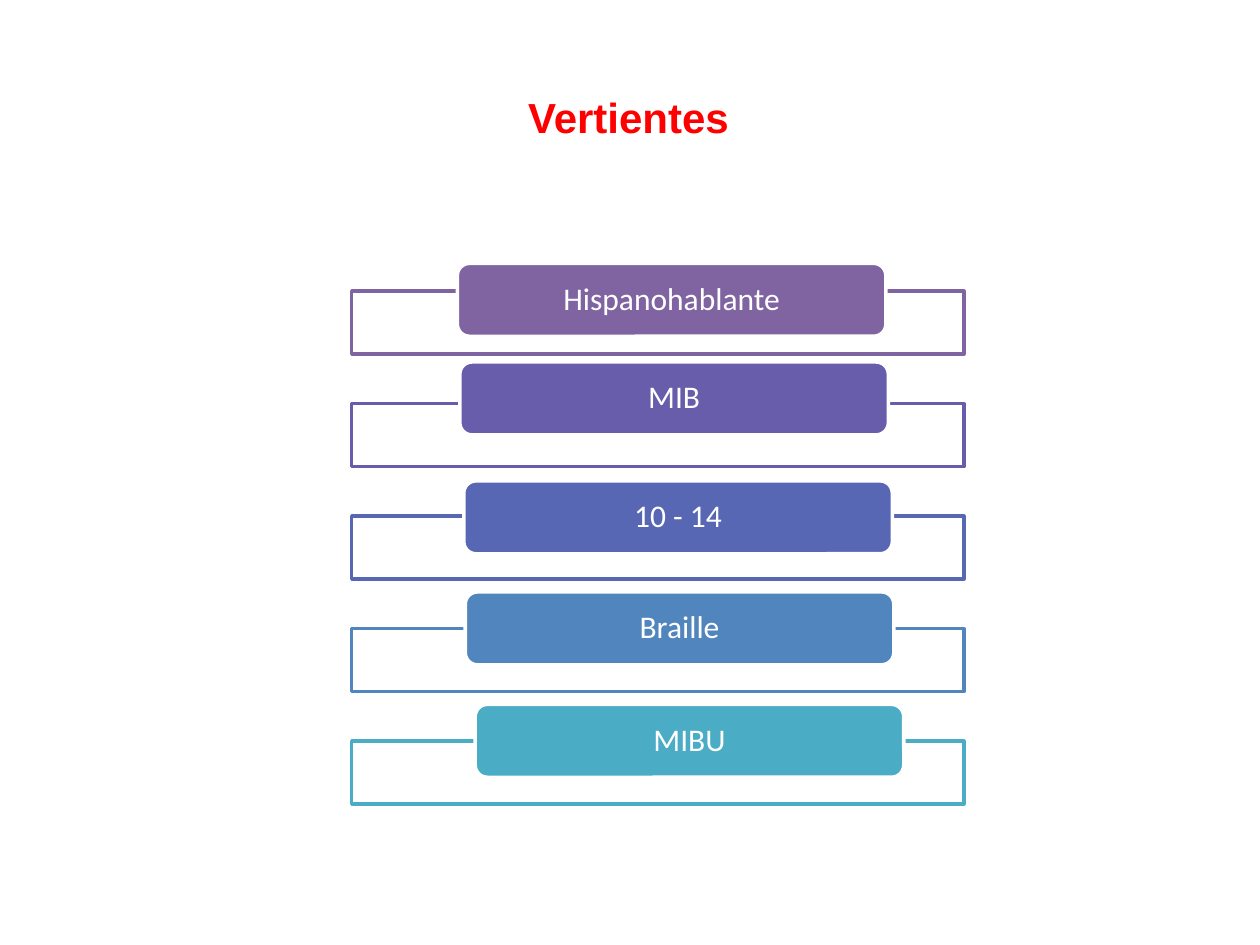
import pptx
import pptx.util
import pptx.dml.color
import pptx.enum.shapes
import pptx.enum.text
import pptx.oxml.ns
from dataclasses import dataclass
from lxml import etree

Cm = pptx.util.Cm
Pt = pptx.util.Pt
Shape = pptx.enum.shapes.MSO_SHAPE
Align = pptx.enum.text.PP_ALIGN
Anchor = pptx.enum.text.MSO_ANCHOR


@dataclass(frozen=True)
class Theme:
    white: str = "FFFFFF"
    red: str = "FF0000"
    head: str = "Arial"
    body: str = "Calibri"
    big: int = 24
    mid: int = 18
    line: int = 2


theme = Theme()

ROWS = [
    ("Hispanohablante", "8064A2", 2.13, -0.56),
    ("MIB", "685DAB", 2.18, -0.84),
    ("10 - 14", "5767B4", 2.26, -0.71),
    ("Braille", "5185BD", 2.29, -0.74),
    ("MIBU", "4BACC6", 2.49, -0.74),
]


def rgb(code):
    return pptx.dml.color.RGBColor.from_string(code)


def style(para, face, size, color, bold=False):
    para.alignment = Align.CENTER
    font = para.runs[0].font
    font.name = face
    font.size = Pt(size)
    font.bold = bold
    font.color.rgb = rgb(color)


def block(shapes, kind, box, fill, line):
    shape = shapes.add_shape(kind, *[Cm(n) for n in box])
    shape.shadow.inherit = False
    shape.fill.solid()
    shape.fill.fore_color.rgb = rgb(fill)
    shape.line.color.rgb = rgb(line)
    shape.line.width = Pt(theme.line)
    return shape


def fade(shape, share):
    tag = pptx.oxml.ns.qn
    color = shape.fill._xPr.find(tag("a:solidFill")).find(tag("a:srgbClr"))
    etree.SubElement(color, tag("a:alpha")).set("val", str(share * 1000))


def title(slide, box, text):
    frame = slide.shapes.add_textbox(*[Cm(n) for n in box]).text_frame
    frame.word_wrap = False
    frame.text = text
    style(frame.paragraphs[0], theme.head, theme.big, theme.red, True)


def label(pill, text):
    frame = pill.text_frame
    frame.text = text
    frame.word_wrap = True
    frame.vertical_anchor = Anchor.MIDDLE
    frame.margin_left = frame.margin_right = Cm(0.4)
    frame.margin_top = frame.margin_bottom = 0
    para = frame.paragraphs[0]
    para.line_spacing = 0.9
    style(para, theme.body, theme.mid, theme.white)


def stack(slide, box, rows):
    left, top, width, height = box
    deep = 1.27
    step = (height - deep) / (len(rows) - 1)
    shapes = slide.shapes.add_group_shape().shapes
    for i, (text, color, dx, dy) in enumerate(rows):
        y = top + i * step
        frame = block(shapes, Shape.RECTANGLE, (left, y, width, deep),
                      theme.white, color)
        fade(frame, 90)
        pill = block(shapes, Shape.ROUNDED_RECTANGLE,
                     (left + dx, y + dy, 8.64, 1.47), color, theme.white)
        label(pill, text)


def main():
    deck = pptx.Presentation()
    deck.slide_width = Cm(25.4)
    deck.slide_height = Cm(19.05)
    slide = deck.slides.add_slide(deck.slide_layouts[6])
    title(slide, (10.28, 1.73, 4.78, 1.27), "Vertientes")
    stack(slide, (7.09, 5.87, 12.34, 10.34), ROWS)
    deck.save("out.pptx")


if __name__ == "__main__":
    main()
